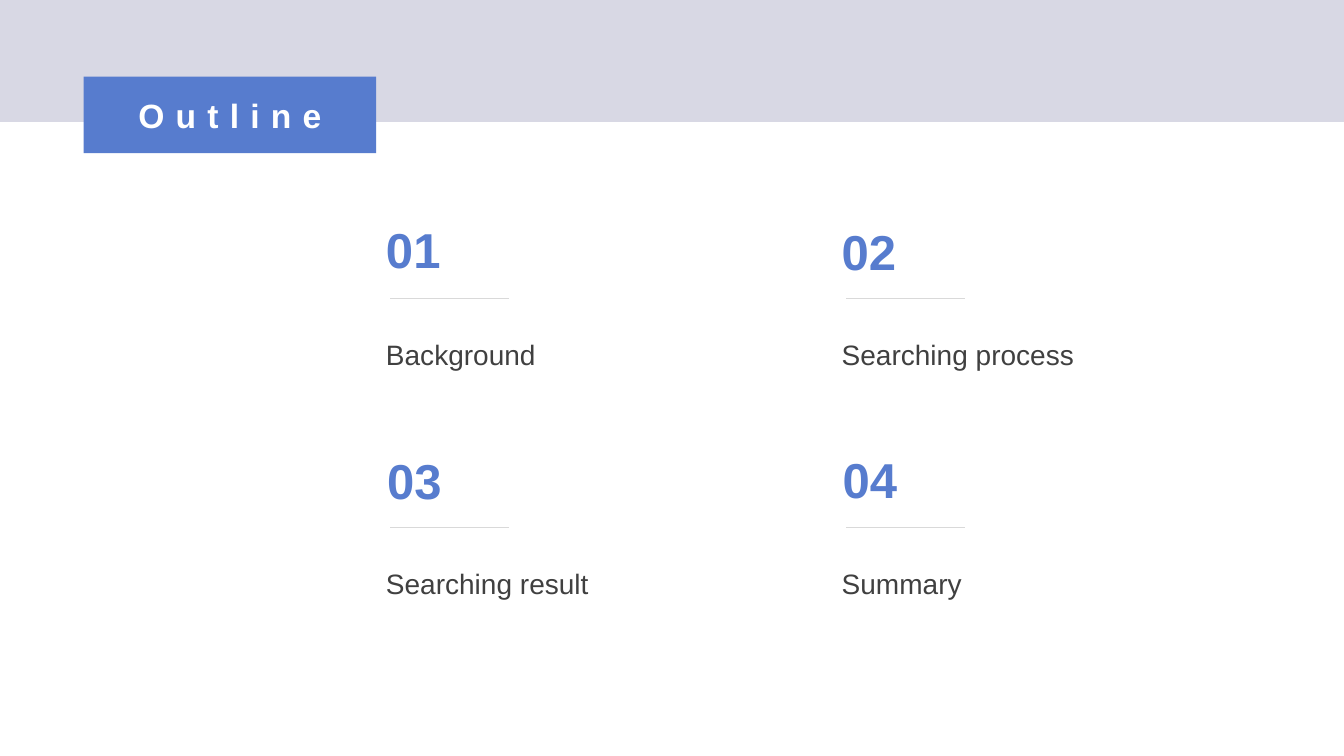
from dataclasses import dataclass

import lxml.etree
import pptx
import pptx.dml.color
import pptx.enum.shapes
import pptx.enum.text
import pptx.oxml.ns
import pptx.util

Inches = pptx.util.Inches
Pt = pptx.util.Pt

COLOURS = {
    "band": "D8D8E4",
    "accent": "577CCE",
    "label": "404040",
    "rule": "D9D9D9",
    "title": "FFFFFF",
}
FONT = "Arial"
COLUMN_LEFTS = (3.73, 8.25)
LABEL_TOPS = (3.13, 5.4)
RULE_TOPS = (2.96, 5.23)
RULE_INDENT = 0.14
RULE_WIDTH = 1.18


@dataclass(frozen=True)
class Topic:
    number: str
    label: str
    number_left: float
    number_top: float


TOPICS = (
    Topic("01", "Background", 3.73, 2.13),
    Topic("02", "Searching process", 8.25, 2.15),
    Topic("03", "Searching result", 3.74, 4.42),
    Topic("04", "Summary", 8.26, 4.41),
)


def colour(name: str) -> pptx.dml.color.RGBColor:
    return pptx.dml.color.RGBColor.from_string(COLOURS[name])


def add_span(para, text: str, size: float, colour_name: str, bold: bool = False):
    span = para.add_run()
    span.text = text
    span.font.name = FONT
    span.font.size = Pt(size)
    span.font.bold = bold
    span.font.color.rgb = colour(colour_name)
    return span


def add_band(page) -> None:
    band = page.shapes.add_shape(
        pptx.enum.shapes.MSO_SHAPE.RECTANGLE, 0, 0, Inches(13.33), Inches(1.21)
    )
    band.shadow.inherit = False
    band.fill.solid()
    band.fill.fore_color.rgb = colour("band")
    band.line.fill.background()


def add_text_box(page, left: float, top: float, width: float, height: float):
    box = page.shapes.add_textbox(
        Inches(left), Inches(top), Inches(width), Inches(height)
    )
    box.text_frame.word_wrap = True
    return box.text_frame.paragraphs[0]


def add_rule(page, left: float, top: float) -> None:
    rule = page.shapes.add_connector(
        pptx.enum.shapes.MSO_CONNECTOR.STRAIGHT,
        Inches(left + RULE_WIDTH), Inches(top), Inches(left), Inches(top),
    )
    rule.line.color.rgb = colour("rule")
    rule.line.width = Pt(0.5)
    lxml.etree.SubElement(
        rule._element.spPr, pptx.oxml.ns.qn("a:effectLst")
    )


def add_topic(page, topic: Topic, row: int, column: int) -> None:
    left = COLUMN_LEFTS[column]
    para = add_text_box(page, left, LABEL_TOPS[row], 3.54, 1.05)
    para.alignment = pptx.enum.text.PP_ALIGN.JUSTIFY
    para.line_spacing = 1.5
    para.space_after = Pt(20)
    add_span(para, topic.label, 20, "label")

    para = add_text_box(page, topic.number_left, topic.number_top, 0.89, 0.84)
    add_span(para, topic.number, 35, "accent", bold=True)
    add_rule(page, left + RULE_INDENT, RULE_TOPS[row])


def format_title(page) -> None:
    title = page.shapes.title
    title.left, title.top = Inches(0.83), Inches(0.76)
    title.width, title.height = Inches(2.9), Inches(0.76)
    title.fill.solid()
    title.fill.fore_color.rgb = colour("accent")
    title.text_frame.vertical_anchor = pptx.enum.text.MSO_ANCHOR.MIDDLE
    para = title.text_frame.paragraphs[0]
    para.alignment = pptx.enum.text.PP_ALIGN.CENTER
    span = add_span(para, "Outline", 24, "title", bold=True)
    span.font._element.set("spc", "800")
    page.shapes._spTree.append(title._element)


def main() -> None:
    deck = pptx.Presentation()
    deck.slide_width = Inches(13.33)
    deck.slide_height = Inches(7.5)
    page = deck.slides.add_slide(deck.slide_layouts[5])
    add_band(page)
    for index, topic in enumerate(TOPICS):
        row, column = divmod(index, len(COLUMN_LEFTS))
        add_topic(page, topic, row, column)
    format_title(page)
    deck.save("out.pptx")


if __name__ == "__main__":
    main()
